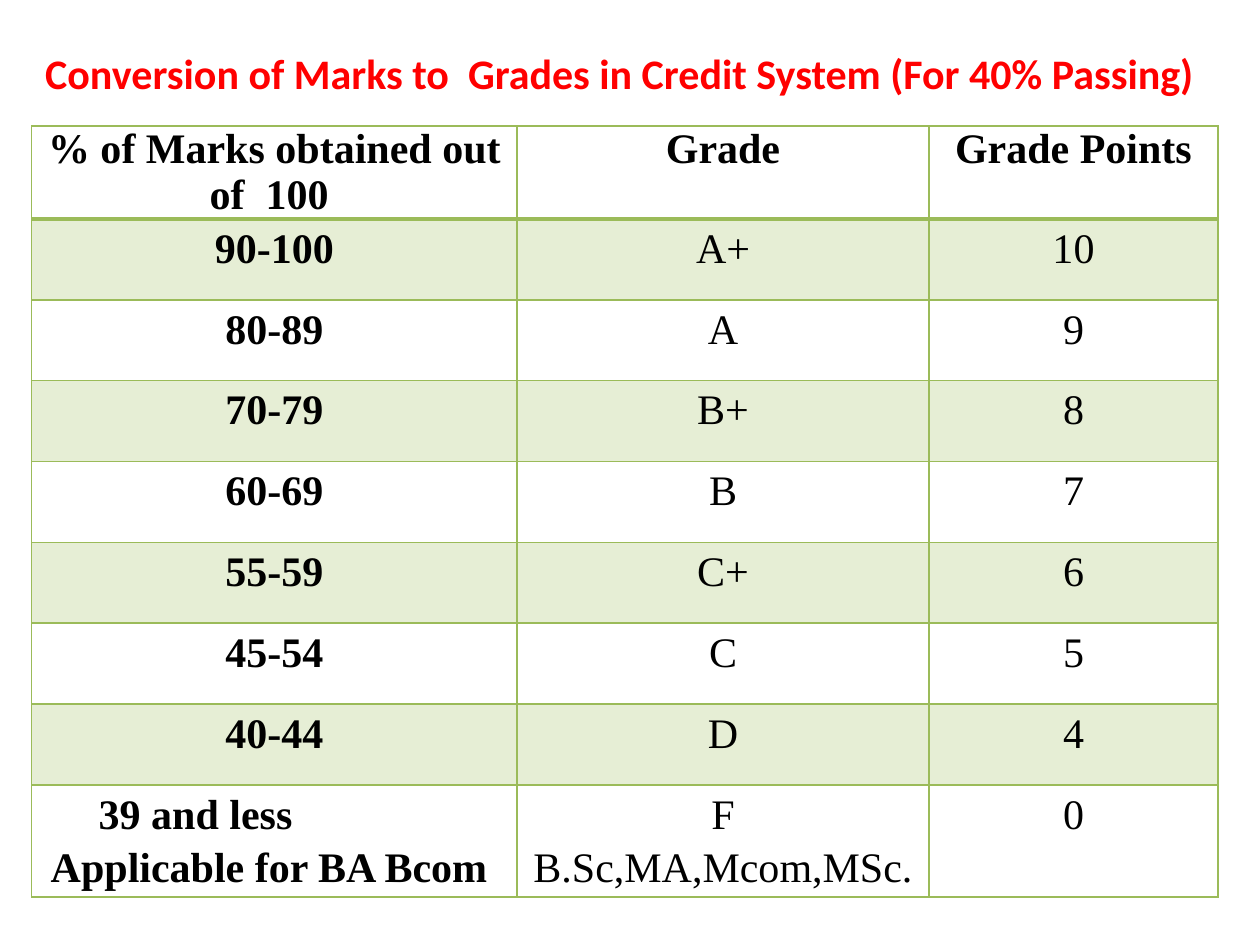
from dataclasses import dataclass

from lxml.etree import SubElement
from pptx import Presentation
from pptx.dml.color import RGBColor
from pptx.enum.text import PP_ALIGN
from pptx.oxml.ns import qn
from pptx.util import Cm, Pt


@dataclass(frozen=True)
class Theme:
    title_color: str = "FF0000"
    text_color: str = "000000"
    border_color: str = "9BBB59"
    band_color: str = "E6EED5"
    title_font: str = "Calibri"
    table_font: str = "Times New Roman"
    text_size: int = 24
    thin_border: float = 1
    thick_border: float = 2.25
    line_spacing: float = 1.15


HEADERS = ["% of Marks obtained out of  100 ", "Grade", "Grade Points"]
GRADES = [
    ["90-100", "A+", "10"],
    ["80-89", "A", "9"],
    ["70-79", "B+", "8"],
    ["60-69", "B", "7"],
    ["55-59", "C+", "6"],
    ["45-54", "C", "5"],
    ["40-44", "D", "4"],
    ["39 and less\nApplicable for BA Bcom ", "F\nB.Sc,MA,Mcom,MSc.", "0"],
]
COLUMN_WIDTHS = [9.78, 8.31, 5.82]
HEADER_HEIGHT, GRADE_HEIGHT, LAST_HEIGHT = 1.85, 1.63, 2.26


class SlideBuilder:
    def __init__(self, slide, theme):
        self.slide = slide
        self.theme = theme

    def format_paragraph(self, paragraph, font_name, color, bold):
        paragraph.alignment = PP_ALIGN.CENTER
        for run in paragraph.runs:
            run.font.name = font_name
            run.font.size = Pt(self.theme.text_size)
            run.font.bold = bold
            run.font.color.rgb = RGBColor.from_string(color)

    def add_title(self, text, left, top, width, height):
        box = self.slide.shapes.add_textbox(Cm(left), Cm(top), Cm(width), Cm(height))
        frame = box.text_frame
        frame.word_wrap = True
        frame.margin_left = frame.margin_right = 0
        frame.text = text
        self.format_paragraph(frame.paragraphs[0], self.theme.title_font,
                              self.theme.title_color, True)

    def add_border(self, cell, side, width):
        """Draw one side of a cell: L, R, T or B, in that order."""
        line = SubElement(cell._tc.get_or_add_tcPr(), qn(f"a:ln{side}"), w=str(Pt(width)))
        fill = SubElement(line, qn("a:solidFill"))
        SubElement(fill, qn("a:srgbClr"), val=self.theme.border_color)

    def format_cell(self, cell, text, row, column):
        theme = self.theme
        cell.margin_left = cell.margin_right = Cm(0.18)
        cell.margin_top = cell.margin_bottom = 0
        thick_side = {0: "B", 1: "T"}.get(row)
        for side in "LRTB":
            self.add_border(cell, side,
                            theme.thick_border if side == thick_side else theme.thin_border)
        if row % 2:
            cell.fill.solid()
            cell.fill.fore_color.rgb = RGBColor.from_string(theme.band_color)
        else:
            cell.fill.background()
        cell.text_frame.text = text
        for paragraph in cell.text_frame.paragraphs:
            self.format_paragraph(paragraph, theme.table_font, theme.text_color,
                                  row == 0 or column == 0)
            if row:
                paragraph.line_spacing = theme.line_spacing

    def add_table(self, rows, left, top, widths, heights):
        frame = self.slide.shapes.add_table(
            len(rows), len(widths), Cm(left), Cm(top), Cm(sum(widths)), Cm(sum(heights)))
        table = frame.table
        table.first_row = table.horz_banding = False
        for column, width in zip(table.columns, widths):
            column.width = Cm(width)
        for row, height in zip(table.rows, heights):
            row.height = Cm(height)
        for row, texts in enumerate(rows):
            for column, text in enumerate(texts):
                self.format_cell(table.cell(row, column), text, row, column)
        return table

    def indent(self, paragraph, distance):
        paragraph.alignment = PP_ALIGN.LEFT
        properties = paragraph._p.get_or_add_pPr()
        properties.set("marL", str(Cm(distance)))
        properties.set("indent", "0")


def main():
    presentation = Presentation()
    presentation.slide_width, presentation.slide_height = Cm(25.4), Cm(19.05)
    slide = presentation.slides.add_slide(presentation.slide_layouts[6])
    builder = SlideBuilder(slide, Theme())

    heights = [HEADER_HEIGHT] + [GRADE_HEIGHT] * (len(GRADES) - 1) + [LAST_HEIGHT]
    table = builder.add_table([HEADERS] + GRADES, 0.64, 2.54, COLUMN_WIDTHS, heights)
    fail_cell = table.cell(len(GRADES), 0)
    builder.indent(fail_cell.text_frame.paragraphs[0], 1.17)

    builder.add_title("Conversion of Marks to  Grades in Credit System (For 40% Passing)",
                      0.64, 0.84, 23.7, 1.27)
    presentation.save("out.pptx")


if __name__ == "__main__":
    main()
